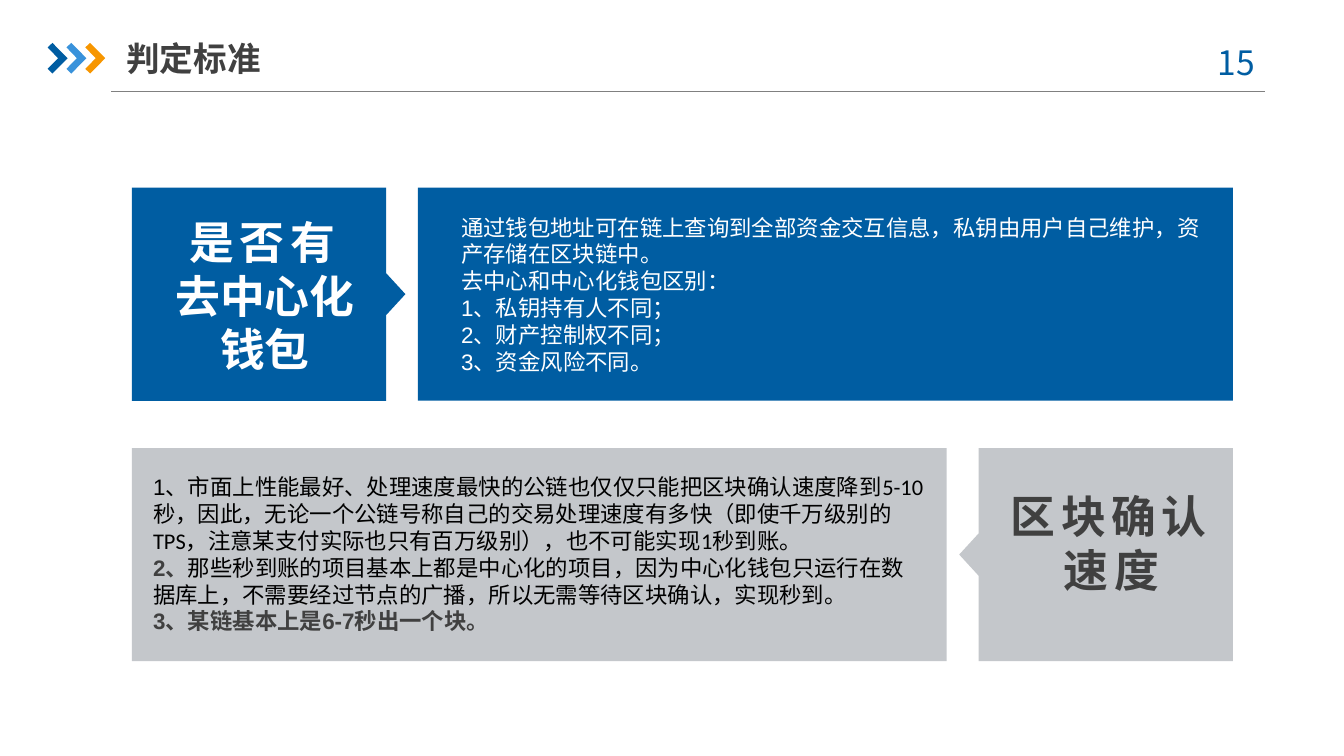
from lxml.etree import SubElement
from pptx import Presentation
from pptx.dml.color import RGBColor
from pptx.enum.lang import MSO_LANGUAGE_ID
from pptx.enum.shapes import MSO_CONNECTOR, MSO_SHAPE
from pptx.enum.text import MSO_ANCHOR, MSO_AUTO_SIZE, PP_ALIGN
from pptx.oxml.ns import qn
from pptx.util import Pt

BLUE = RGBColor(0x00, 0x5D, 0xA2)
LIGHT_BLUE = RGBColor(0x39, 0x92, 0xDB)
ORANGE = RGBColor(0xF7, 0x96, 0x00)
SILVER = RGBColor(0xC4, 0xC7, 0xCB)
GRAY = RGBColor(0x80, 0x80, 0x80)
DARK = RGBColor(0x40, 0x40, 0x40)
WHITE = RGBColor(0xFF, 0xFF, 0xFF)
BLACK = RGBColor(0x00, 0x00, 0x00)
CJK = "Noto Sans CJK SC"

# A run is (text, font, size, colour, bold, letter spacing in points).
TITLE = [[("判定标准", CJK, 18, DARK, True, 0)]]
PAGE_NUMBER = [[("15", CJK, 18, BLUE, False, 0)]]
WALLET_TAG = [[
    ("是否有", CJK, 24, WHITE, True, 3),
    ("去中心化钱包", CJK, 24, WHITE, True, 0),
]]
WALLET_BODY = [
    [("通过钱包地址可在链上查询到全部资金交互信息，私钥由用户自己维护，资产存储在区块链中。",
      "Calibri", 12, WHITE, False, 0)],
] + [[(text, "Arial", 12, WHITE, False, 0)] for text in (
    "去中心和中心化钱包区别：",
    "1、私钥持有人不同；",
    "2、财产控制权不同；",
    "3、资金风险不同。",
)]
SPEED_TAG = [[("区块确认速度", CJK, 24, DARK, True, 3)]]
SPEED_BODY = [
    [("1、", "Arial", 12, BLACK, False, 0),
     ("市面上性能最好、处理速度最快的公链也仅仅只能把区块确认速度降到5-10秒，"
      "因此，无论一个公链号称自己的交易处理速度有多快（即使千万级别的TPS，"
      "注意某支付实际也只有百万级别），也不可能实现1秒到账。",
      "Calibri", 12, BLACK, False, 0)],
    [("2、", "Arial", 12, DARK, True, 0),
     ("那些秒到账的项目基本上都是中心化的项目，因为中心化钱包只运行在数据库上，"
      "不需要经过节点的广播，所以无需等待区块确认，实现秒到。",
      "Calibri", 12, BLACK, False, 0)],
    [("3、某链基本上是6-7秒出一个块。", "Arial", 12, DARK, True, 0)],
]

# Text boxes: paragraphs, (left, top, width, height), alignment
TEXTS = [
    (WALLET_TAG, (93.5, 115, 97, 87), PP_ALIGN.CENTER),
    (WALLET_BODY, (247, 114.5, 402.5, 87), PP_ALIGN.LEFT),
    (SPEED_TAG, (541.5, 262, 108, 58), PP_ALIGN.CENTER),
    (SPEED_BODY, (82, 253.5, 414, 87), PP_ALIGN.LEFT),
]
# Rows: top, colour, whether the tag is on the right
ROWS = [(100.5, BLUE, False), (240, SILVER, True)]
LEFT, RIGHT, ROW_HEIGHT = 70.6, 660.5, 114.2
TAG_WIDTH, BODY_WIDTH = 136.2, 436.6
TIP_DEPTH, TIP_HALF = 10.4, 11.3

CHEVRON = [(25.5, 25.4), (28.1, 23), (36.2, 31.2), (28.1, 39.4), (25.5, 36.9), (31.1, 31.2)]
CHEVRON_STEP = 10.1


def paint(shape, colour):
    shape.shadow.inherit = False
    shape.fill.solid()
    shape.fill.fore_color.rgb = colour
    shape.line.fill.background()


def add_outline(slide, points, colour):
    corners = [(Pt(x), Pt(y)) for x, y in points]
    builder = slide.shapes.build_freeform(*corners[0])
    builder.add_line_segments(corners[1:], close=True)
    paint(builder.convert_to_shape(), colour)


def style(font, name, size, colour, bold, spacing):
    font.name, font.size, font.bold = name, Pt(size), bold
    font.color.rgb = colour
    font.language_id = MSO_LANGUAGE_ID.SIMPLIFIED_CHINESE
    properties = font._rPr
    SubElement(properties, qn("a:ea")).set("typeface", CJK)
    if spacing:
        properties.set("spc", str(spacing * 100))


def add_text(slide, paragraphs, box, alignment=PP_ALIGN.LEFT, insets=(0, 0),
             anchor=MSO_ANCHOR.TOP, auto_size=MSO_AUTO_SIZE.SHAPE_TO_FIT_TEXT):
    frame = slide.shapes.add_textbox(*map(Pt, box)).text_frame
    frame.word_wrap = True
    frame.auto_size = auto_size
    frame.vertical_anchor = anchor
    frame.margin_left = frame.margin_right = Pt(insets[0])
    frame.margin_top = frame.margin_bottom = Pt(insets[1])
    for index, runs in enumerate(paragraphs):
        paragraph = frame.add_paragraph() if index else frame.paragraphs[0]
        paragraph.alignment = alignment
        for text, *look in runs:
            run = paragraph.add_run()
            run.text = text
            style((run if len(runs) > 1 else paragraph).font, *look)


def add_row(slide, top, colour, mirrored):
    def place(x):
        return LEFT + RIGHT - x if mirrored else x

    body_left = LEFT if mirrored else RIGHT - BODY_WIDTH
    body = slide.shapes.add_shape(
        MSO_SHAPE.RECTANGLE, Pt(body_left), Pt(top), Pt(BODY_WIDTH), Pt(ROW_HEIGHT))
    paint(body, colour)
    edge, middle, bottom = LEFT + TAG_WIDTH, top + ROW_HEIGHT / 2, top + ROW_HEIGHT
    tag = [(LEFT, top), (edge, top), (edge, middle - TIP_HALF), (edge + TIP_DEPTH, middle),
           (edge, middle + TIP_HALF), (edge, bottom), (LEFT, bottom)]
    add_outline(slide, [(place(x), y) for x, y in tag], colour)


def add_header(slide):
    rule = slide.shapes.add_connector(
        MSO_CONNECTOR.STRAIGHT, Pt(59.5), Pt(49.2), Pt(677.5), Pt(49.2))
    rule.line.color.rgb = GRAY
    rule.line.width = Pt(0.75)
    SubElement(rule._element.spPr, qn("a:effectLst"))
    for index, colour in enumerate((BLUE, LIGHT_BLUE, ORANGE)):
        add_outline(slide, [(x + index * CHEVRON_STEP, y) for x, y in CHEVRON], colour)
    add_text(slide, PAGE_NUMBER, (636, 18.7, 52.5, 29), PP_ALIGN.CENTER, (7.2, 3.6))
    add_text(slide, TITLE, (67.7, 15.8, 168, 30.2), insets=(0, 3.6),
             anchor=MSO_ANCHOR.MIDDLE, auto_size=MSO_AUTO_SIZE.NONE)


def main():
    presentation = Presentation()
    presentation.slide_width, presentation.slide_height = Pt(720), Pt(405)
    slide = presentation.slides.add_slide(presentation.slide_layouts[6])
    add_header(slide)
    for row in ROWS:
        add_row(slide, *row)
    for paragraphs, box, alignment in TEXTS:
        add_text(slide, paragraphs, box, alignment)
    presentation.save("out.pptx")


if __name__ == "__main__":
    main()
